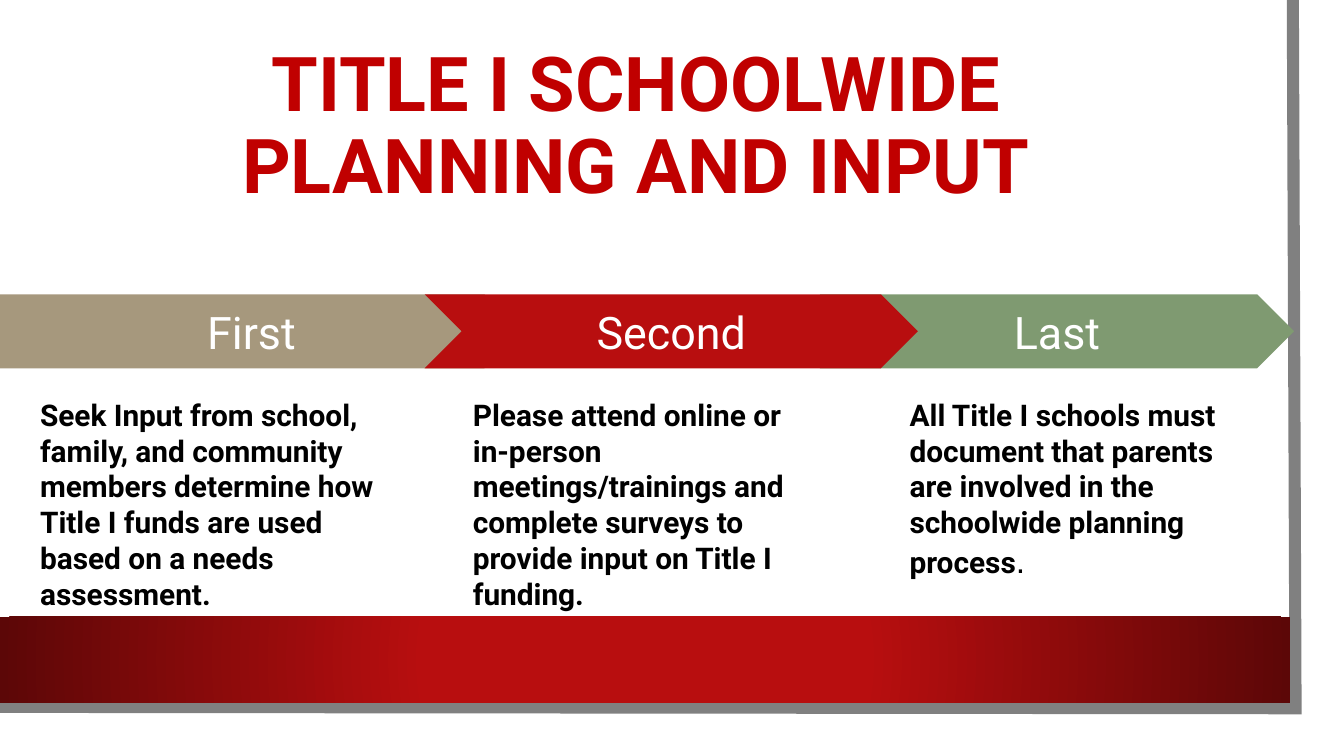
from lxml import etree
from pptx import Presentation
from pptx.dml.color import RGBColor
from pptx.enum.shapes import MSO_SHAPE
from pptx.enum.text import MSO_ANCHOR, PP_ALIGN
from pptx.oxml import parse_xml
from pptx.util import Inches, Pt

DRAWING = "http://schemas.openxmlformats.org/drawingml/2006/main"


def color(hex_code):
    return RGBColor.from_string(hex_code)


def write(shape, text, size, hex_code, bold=False, align=PP_ALIGN.LEFT, anchor=MSO_ANCHOR.TOP):
    frame = shape.text_frame
    frame.word_wrap = True
    frame.vertical_anchor = anchor
    frame.margin_left = frame.margin_right = Inches(0.1)
    frame.margin_top = frame.margin_bottom = Inches(0.1)
    frame.text = text
    paragraph = frame.paragraphs[0]
    paragraph.alignment = align
    font = paragraph.runs[0].font
    font.name, font.size, font.bold = "Roboto", Pt(size), bold
    font.color.rgb = color(hex_code)
    return paragraph


# Widescreen slide, 16:9
prs = Presentation()
prs.slide_width = Inches(10)
prs.slide_height = Inches(10 * 9 / 16)
slide = prs.slides.add_slide(prs.slide_layouts[6])
shapes = slide.shapes

# Grey edge along the right and bottom, with a sharp corner
edge_path = shapes.build_freeform(Inches(9.62), 0, scale=1.0)
edge_path.add_line_segments(
    [(Inches(9.64), Inches(5.27)), (Inches(-0.02), Inches(5.26))], close=False)
edge = edge_path.convert_to_shape()
edge.shadow.inherit = False
edge.fill.background()
edge.line.color.rgb = color("808080")
edge.line.width = Pt(6.5)
outline = edge.line.fill._xPr
etree.SubElement(outline, f"{{{DRAWING}}}miter", lim="800000")

# Red band, darkening outwards from its centre
band = shapes.add_shape(MSO_SHAPE.RECTANGLE, 0, Inches(4.59), Inches(9.6), Inches(0.64))
band.shadow.inherit = False
band.line.fill.background()
band.fill.gradient()
for stop, position, shade in zip(band.fill.gradient_stops, (0.34, 1), ("B80E0F", "5C0707")):
    stop.position = position
    stop.color.rgb = color(shade)
linear = band.fill._xPr.find(f".//{{{DRAWING}}}lin")
radial = parse_xml(f'<a:path xmlns:a="{DRAWING}" path="circle"/>')
etree.SubElement(radial, f"{{{DRAWING}}}fillToRect", l="50000", t="50000", r="50000", b="50000")
linear.getparent().replace(linear, radial)

# Title
title = shapes.add_textbox(Inches(0.62), Inches(0.72), Inches(8.23), Inches(0.94))
heading = write(title, "TITLE I SCHOOLWIDE PLANNING AND INPUT", 40.5, "C00000", True,
                PP_ALIGN.CENTER, MSO_ANCHOR.BOTTOM)
heading.line_spacing = 0.9

# Steps, back to front: label, arrow, left, width, fill, note left, note width, note
steps = [
    ("Last", MSO_SHAPE.CHEVRON, 6.1, 3.53, "7F9A71", 6.67, 2.67,
     "All Title I schools must document that parents are involved in the "
     "schoolwide planning process"),
    ("First", MSO_SHAPE.PENTAGON, 0, 3.88, "A6987D", 0.2, 2.92,
     "Seek Input from school, family, and community members determine how "
     "Title I funds are used based on a needs assessment."),
    ("Second", MSO_SHAPE.CHEVRON, 3.16, 3.67, "B80E0F", 3.42, 2.79,
     "Please attend online or in-person meetings/trainings and complete surveys "
     "to provide input on Title I funding."),
]
notes = {}
for label, kind, left, width, fill, note_left, note_width, note in steps:
    arrow = shapes.add_shape(kind, Inches(left), Inches(2.19), Inches(width), Inches(0.55))
    arrow.shadow.inherit = False
    arrow.fill.solid()
    arrow.fill.fore_color.rgb = color(fill)
    arrow.line.fill.background()
    write(arrow, label, 24, "FFFFFF", align=PP_ALIGN.CENTER, anchor=MSO_ANCHOR.MIDDLE)

    note_box = shapes.add_textbox(Inches(note_left), Inches(2.85), Inches(note_width), Inches(1.67))
    notes[label] = write(note_box, note, 16, "000000", True)

# The last note ends with a lighter full stop
full_stop = notes["Last"].add_run()
full_stop.text = "."
full_stop.font.name, full_stop.font.size, full_stop.font.bold = "Arial", Pt(18), False
full_stop.font.color.rgb = color("000000")

prs.save("out.pptx")
